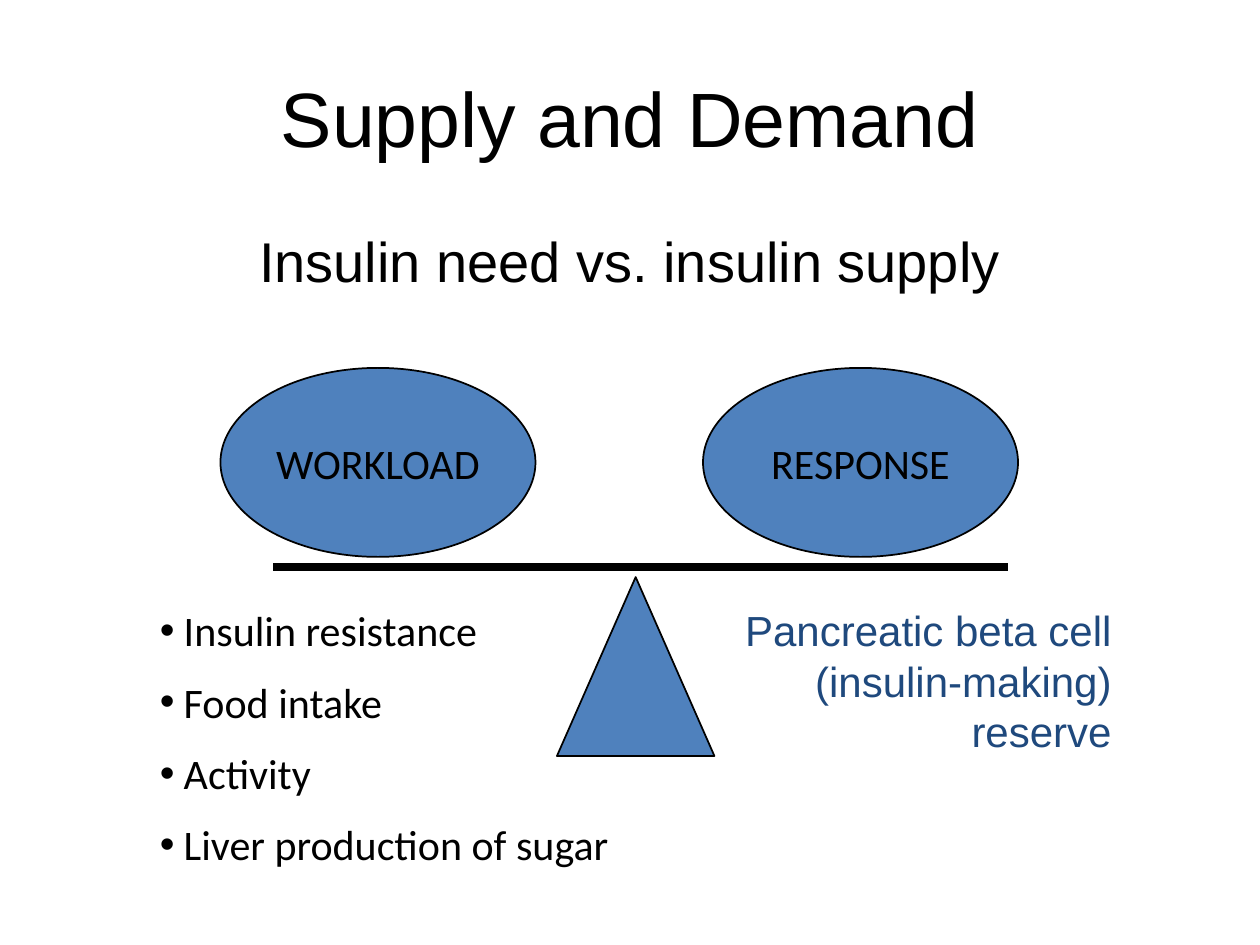
from lxml import etree
from pptx import Presentation
from pptx.dml.color import RGBColor
from pptx.enum import shapes, text
from pptx.oxml import ns
from pptx.util import Inches, Pt

BLACK, BLUE, NAVY = "000000", "4F81BD", "1F497D"
LEFT, CENTER, RIGHT = text.PP_ALIGN.LEFT, text.PP_ALIGN.CENTER, text.PP_ALIGN.RIGHT


def rgb(color):
    return RGBColor.from_string(color)


def write(shape, lines, size, font, align, color=BLACK):
    """Fill a shape with one paragraph per line, all styled alike."""
    frame = shape.text_frame
    frame.word_wrap = True
    frame.text = "\n".join(lines)
    for paragraph in frame.paragraphs:
        paragraph.alignment = align
        paragraph.font.size = Pt(size)
        paragraph.font.name = font
        paragraph.font.color.rgb = rgb(color)


deck = Presentation()
deck.slide_width, deck.slide_height = Inches(10), Inches(7.5)
page = deck.slides.add_slide(deck.slide_layouts[6])

# Headings
title = page.shapes.add_textbox(Inches(0.5), Inches(0.3), Inches(9), Inches(1.25))
write(title, ["Supply and Demand"], 44, "Arial", CENTER)
title.text_frame.vertical_anchor = text.MSO_ANCHOR.MIDDLE

subtitle = page.shapes.add_textbox(Inches(0.5), Inches(1.75), Inches(9), Inches(0.7))
write(subtitle, ["Insulin need vs. insulin supply"], 32, "Arial", CENTER)

# Balance: fulcrum, beam and the two weights
beam = page.shapes.add_connector(
    shapes.MSO_CONNECTOR.STRAIGHT, Inches(2.17), Inches(4.5), Inches(8), Inches(4.5))
beam.line.color.rgb = rgb(BLACK)
beam.line.width = Pt(4.5)
etree.SubElement(beam._element.spPr, ns.qn("a:effectLst"))

triangle, oval = shapes.MSO_SHAPE.ISOSCELES_TRIANGLE, shapes.MSO_SHAPE.OVAL
for kind, left, top, width, height, label in [
    (triangle, 4.42, 4.58, 1.25, 1.42, None),
    (oval, 1.75, 2.92, 2.5, 1.5, "WORKLOAD"),
    (oval, 5.58, 2.92, 2.5, 1.5, "RESPONSE"),
]:
    part = page.shapes.add_shape(
        kind, Inches(left), Inches(top), Inches(width), Inches(height))
    part.shadow.inherit = False
    part.fill.solid()
    part.fill.fore_color.rgb = rgb(BLUE)
    part.line.color.rgb = rgb(BLACK)
    part.line.width = Pt(1)
    if label:
        write(part, [label], 24, "Calibri", CENTER)
        part.text_frame.word_wrap = False
        part.text_frame.vertical_anchor = text.MSO_ANCHOR.MIDDLE

# Notes under each side
reserve = page.shapes.add_textbox(Inches(5.5), Inches(4.75), Inches(3.42), Inches(1.3))
write(reserve, ["Pancreatic beta cell (insulin-making) reserve"], 24, "Arial", RIGHT, NAVY)

demands = page.shapes.add_textbox(Inches(1.17), Inches(4.75), Inches(4.5), Inches(2.3))
write(demands, ["Insulin resistance", "Food intake", "Activity", "Liver production of sugar"],
      24, "Calibri", LEFT)
for paragraph in demands.text_frame.paragraphs:
    paragraph.space_after = Pt(12)
    properties = paragraph._p.get_or_add_pPr()
    properties.set("marL", str(Inches(0.19)))
    properties.set("indent", str(-Inches(0.19)))
    etree.SubElement(properties, ns.qn("a:buFont"), typeface="Arial")
    bullet = etree.SubElement(properties, ns.qn("a:buChar"), char="•")
    # The schema wants bullets ahead of the default run properties
    properties.append(properties.find(ns.qn("a:defRPr")))

deck.save("out.pptx")
